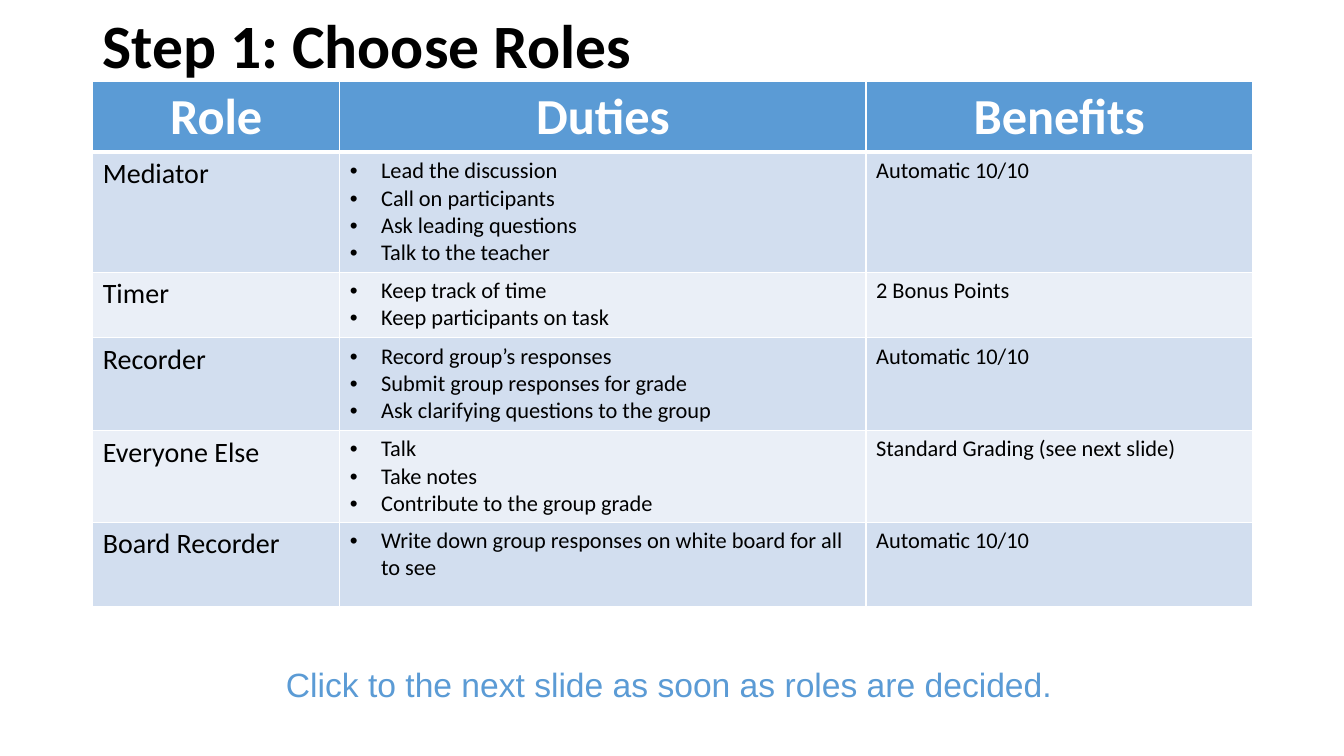
from dataclasses import dataclass

from lxml import etree
from pptx import Presentation
from pptx.dml.color import RGBColor
from pptx.enum.text import MSO_ANCHOR as Anchor, MSO_AUTO_SIZE as AutoSize, PP_ALIGN as Align
from pptx.oxml.ns import qn
from pptx.util import Pt

PX = 9144  # 100 px to the inch
COLORS = {
    "black": "000000",
    "white": "FFFFFF",
    "blue": "5B9BD5",
    "band_dark": "D2DEEF",
    "band_light": "EAEFF7",
}
TITLE = {"name": "Calibri", "size": Pt(44), "bold": True, "color": "black"}
HEADING = {"name": "Calibri", "size": Pt(36), "bold": True, "color": "white"}
ROLE = {"name": "Calibri", "size": Pt(20), "bold": False, "color": "black"}
DETAIL = ROLE | {"size": Pt(16)}
PROMPT = {"name": "Arial", "size": Pt(24), "bold": False, "color": "blue"}

HEADINGS = ("Role", "Duties", "Benefits")
HEADING_HEIGHT = 70
COLUMN_WIDTHS = (245, 522, 383)
BULLET_INDENT = 31


@dataclass(frozen=True)
class Role:
    name: str
    duties: tuple[str, ...]
    benefit: str
    height: int


ROLES = (
    Role("Mediator", ("Lead the discussion", "Call on participants",
                      "Ask leading questions", "Talk to the teacher"),
         "Automatic 10/10", 119),
    Role("Timer", ("Keep track of time", "Keep participants on task"),
         "2 Bonus Points", 65),
    Role("Recorder", ("Record group’s responses", "Submit group responses for grade",
                      "Ask clarifying questions to the group"),
         "Automatic 10/10", 92),
    Role("Everyone Else", ("Talk", "Take notes", "Contribute to the group grade"),
         "Standard Grading (see next slide)", 91),
    Role("Board Recorder", ("Write down group responses on white board for all to see",),
         "Automatic 10/10", 84),
)


def px(length: int) -> int:
    return length * PX


def rgb(color: str) -> RGBColor:
    return RGBColor.from_string(COLORS[color])


def write(frame, lines: tuple[str, ...], style: dict, align: Align = Align.LEFT) -> None:
    """Fill a text frame with one styled paragraph per line."""
    for index, line in enumerate(lines):
        paragraph = frame.add_paragraph() if index else frame.paragraphs[0]
        paragraph.alignment = align
        run = paragraph.add_run()
        run.text = line
        for key, value in style.items():
            if key == "color":
                run.font.color.rgb = rgb(value)
            else:
                setattr(run.font, key, value)


def add_bullets(frame) -> None:
    for paragraph in frame.paragraphs:
        properties = paragraph._p.get_or_add_pPr()
        properties.set("marL", str(px(BULLET_INDENT)))
        properties.set("indent", str(-px(BULLET_INDENT)))
        etree.SubElement(properties, qn("a:buFont"), typeface="Arial")
        etree.SubElement(properties, qn("a:buChar"), char="•")


def paint(cell, color: str, top: int = 1, bottom: int = 1) -> None:
    """Set the fill and the white borders, with widths in points."""
    cell.fill.solid()
    cell.fill.fore_color.rgb = rgb(color)
    properties = cell._tc.get_or_add_tcPr()
    for index, (side, width) in enumerate(
            {"lnL": 1, "lnR": 1, "lnT": top, "lnB": bottom}.items()):
        border = etree.Element(qn(f"a:{side}"), w=str(Pt(width)))
        fill = etree.SubElement(border, qn("a:solidFill"))
        etree.SubElement(fill, qn("a:srgbClr"), val=COLORS["white"])
        properties.insert(index, border)


def add_text(slide, box: tuple[int, int, int, int], line: str, style: dict, align: Align):
    frame = slide.shapes.add_textbox(*map(px, box)).text_frame
    frame.word_wrap = True
    write(frame, (line,), style, align)
    return frame


def add_role_table(slide) -> None:
    heights = (HEADING_HEIGHT, *(role.height for role in ROLES))
    table = slide.shapes.add_table(
        len(heights), len(HEADINGS), px(92), px(81),
        px(sum(COLUMN_WIDTHS)), px(sum(heights))).table
    for column, width in zip(table.columns, COLUMN_WIDTHS):
        column.width = px(width)
    for row, height in zip(table.rows, heights):
        row.height = px(height)
    for index, heading in enumerate(HEADINGS):
        cell = table.cell(0, index)
        write(cell.text_frame, (heading,), HEADING, Align.CENTER)
        paint(cell, "blue", bottom=3)
    for number, role in enumerate(ROLES, start=1):
        name, duties, benefit = table.rows[number].cells
        write(name.text_frame, (role.name,), ROLE)
        write(duties.text_frame, role.duties, DETAIL)
        add_bullets(duties.text_frame)
        write(benefit.text_frame, (role.benefit,), DETAIL)
        for cell in (name, duties, benefit):
            paint(cell, "band_dark" if number % 2 else "band_light",
                  top=3 if number == 1 else 1)


def main() -> None:
    deck = Presentation()
    deck.slide_width, deck.slide_height = px(1333), px(750)
    slide = deck.slides.add_slide(deck.slide_layouts[6])

    title = add_text(slide, (92, -24, 1150, 145), "Step 1: Choose Roles", TITLE, Align.LEFT)
    title.vertical_anchor = Anchor.MIDDLE
    title.paragraphs[0].line_spacing = 0.9

    add_role_table(slide)

    prompt = add_text(slide, (40, 654, 1247, 50),
                      "Click to the next slide as soon as roles are decided.",
                      PROMPT, Align.CENTER)
    prompt.auto_size = AutoSize.SHAPE_TO_FIT_TEXT
    deck.save("out.pptx")


if __name__ == "__main__":
    main()
